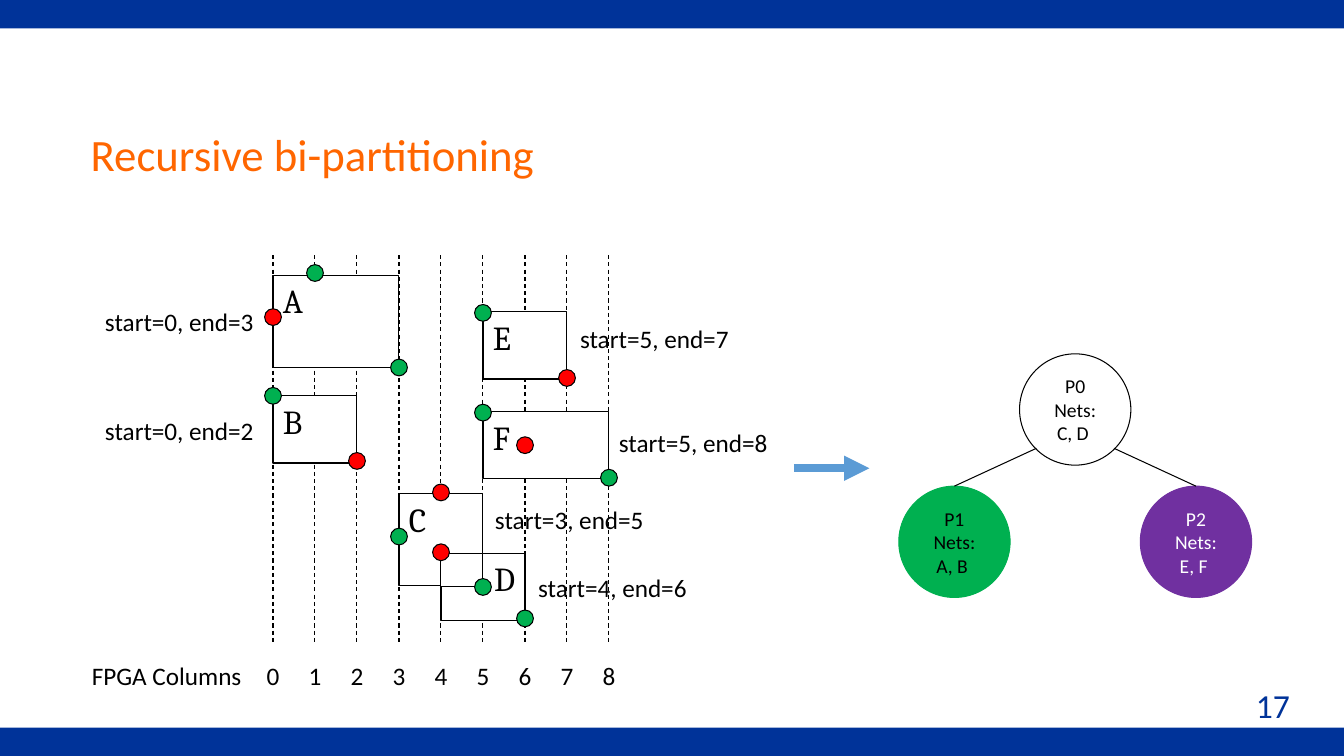
from lxml.etree import SubElement
from pptx import Presentation
from pptx.dml.color import RGBColor
from pptx.enum.dml import MSO_LINE as Dash
from pptx.enum.shapes import MSO_CONNECTOR as Link, MSO_SHAPE as Kind
from pptx.enum.text import MSO_ANCHOR as Anchor, MSO_AUTO_SIZE as Fit, PP_ALIGN as Align
from pptx.oxml.ns import qn
from pptx.util import Emu, Pt

NAVY = RGBColor(0x00, 0x33, 0x99)
ORANGE = RGBColor(0xFF, 0x66, 0x00)
BLACK = RGBColor(0x00, 0x00, 0x00)
WHITE = RGBColor(0xFF, 0xFF, 0xFF)
GREEN = RGBColor(0x00, 0xB0, 0x50)
RED = RGBColor(0xFF, 0x00, 0x00)
PURPLE = RGBColor(0x70, 0x30, 0xA0)
BLUE = RGBColor(0x5B, 0x9B, 0xD5)

LEFT, STEP, COUNT = 260, 40, 9
DOT, NODE = 16, 106


def px(n):
    """Turn whole pixels into EMU."""
    return Emu(n * 9525)


def col(i):
    """Give the x of an FPGA column."""
    return LEFT + STEP * i


class Board:
    """Hold the text style and the current slide."""

    font = "Calibri"
    serif = "Cambria"

    def __init__(self, slide):
        """Keep the shapes of the slide."""
        self.shapes = slide.shapes

    def fill_in(self, frame, lines, size, color, align, font=None):
        """Put lines of text into a frame, one run each."""
        frame.word_wrap = True
        for i, line in enumerate(lines):
            para = frame.paragraphs[0] if i == 0 else frame.add_paragraph()
            para.alignment = align
            run = para.add_run()
            run.text = line
            run.font.size = Pt(size)
            run.font.name = font or self.font
            run.font.color.rgb = color

    def text(self, line, x, y, w, h, size=18, color=BLACK, align=Align.LEFT,
             anchor=Anchor.TOP, fit=Fit.NONE):
        """Add a text box."""
        frame = self.shapes.add_textbox(px(x), px(y), px(w), px(h)).text_frame
        frame.vertical_anchor = anchor
        self.fill_in(frame, [line], size, color, align)
        frame.auto_size = fit

    def label(self, line, x, y, w=175, align=Align.LEFT):
        """Add a small label that grows with its text."""
        self.text(line, x, y, w, 38, align=align, fit=Fit.SHAPE_TO_FIT_TEXT)

    def shape(self, kind, x, y, w, h, fill=None, edge=None):
        """Add a flat preset shape."""
        item = self.shapes.add_shape(kind, px(x), px(y), px(w), px(h))
        item.shadow.inherit = False
        if fill is None:
            item.fill.background()
        else:
            item.fill.solid()
            item.fill.fore_color.rgb = fill
        if edge is None:
            item.line.fill.background()
        else:
            item.line.color.rgb = edge
            item.line.width = Pt(0.75)
        return item

    def net(self, name, first, last, y, h, dots, align=Align.LEFT):
        """Add a net's box between two columns, with its pins."""
        box = self.shape(Kind.RECTANGLE, col(first), y, STEP * (last - first), h,
                         WHITE, BLACK)
        if name:
            box.text_frame.vertical_anchor = Anchor.TOP
            self.fill_in(box.text_frame, [name], 24, BLACK, align, self.serif)
        for i, mid, color in dots:
            self.shape(Kind.OVAL, col(i) - DOT // 2, mid - DOT // 2, DOT, DOT,
                       color, BLACK)

    def node(self, lines, x, y, fill, edge, color):
        """Add a round tree node."""
        item = self.shape(Kind.OVAL, x, y, NODE, NODE, fill, edge)
        item.text_frame.vertical_anchor = Anchor.MIDDLE
        self.fill_in(item.text_frame, lines, 14, color, Align.CENTER)
        return item

    def line(self, x1, y1, x2, y2, color=BLACK, width=0.75, dash=None, head=False):
        """Add a straight line or arrow."""
        item = self.shapes.add_connector(Link.STRAIGHT, px(x1), px(y1), px(x2), px(y2))
        item.line.color.rgb = color
        item.line.width = Pt(width)
        if dash:
            item.line.dash_style = dash
        props = item.element.spPr
        if head:
            SubElement(props.find(qn("a:ln")), qn("a:tailEnd"), type="triangle")
        SubElement(props, qn("a:effectLst"))
        return item


def main():
    """Build the slide and save it."""
    deck = Presentation()
    deck.slide_width, deck.slide_height = px(1280), px(720)
    board = Board(deck.slides.add_slide(deck.slide_layouts[6]))

    for y in (693, 0):
        board.shape(Kind.RECTANGLE, 0, y, 1280, 27, NAVY)
    board.text("Recursive bi-partitioning", 77, 86, 913, 120, 32, ORANGE,
               anchor=Anchor.MIDDLE)
    board.text("17", 971, 648, 267, 48, 24, NAVY, Align.RIGHT)

    for i in range(COUNT):
        board.line(col(i), 243, col(i), 611, dash=Dash.DASH)
        board.label(str(i), col(i) - 24, 624, 48, Align.CENTER)
    board.label("FPGA Columns", 78, 624, 184)

    board.net("A", 0, 3, 262, 88, [(1, 260, GREEN), (0, 302, RED), (3, 350, GREEN)])
    board.net("B", 0, 2, 377, 64, [(0, 377, GREEN), (2, 439, RED)])
    board.net("F", 5, 8, 392, 64, [(5, 393, GREEN), (8, 455, GREEN), (6, 424, RED)])
    board.net("E", 5, 7, 297, 64, [(7, 360, RED), (5, 298, GREEN)])
    board.net("D", 4, 6, 527, 64, [(6, 589, GREEN)], Align.RIGHT)
    board.net("C", 3, 5, 470, 88, [(4, 469, RED), (3, 511, GREEN)])
    board.net("", 4, 5, 527, 32, [(5, 559, GREEN), (4, 526, RED)])

    for first, last, x, y, align in (
        (0, 3, 76, 287, Align.RIGHT),
        (0, 2, 76, 391, Align.RIGHT),
        (5, 8, 580, 402, Align.LEFT),
        (5, 7, 543, 303, Align.LEFT),
        (4, 6, 503, 540, Align.LEFT),
        (3, 5, 462, 476, Align.LEFT),
    ):
        board.label(f"start={first}, end={last}", x, y, align=align)

    board.node(["P0", "Nets: C, D "], 971, 337, None, BLACK, BLACK)
    for name, nets, x, fill, color, start in (
        ("P1", "A, B", 856, GREEN, BLACK, 987),
        ("P2", "E, F", 1086, PURPLE, WHITE, 1061),
    ):
        child = board.node([name, f"Nets: {nets} "], x, 463, fill, fill, color)
        branch = board.line(start, 427, x + NODE // 2, 463)
        branch.end_connect(child, 0)

    board.line(756, 446, 828, 446, BLUE, 6, head=True)
    deck.save("out.pptx")


if __name__ == "__main__":
    main()
